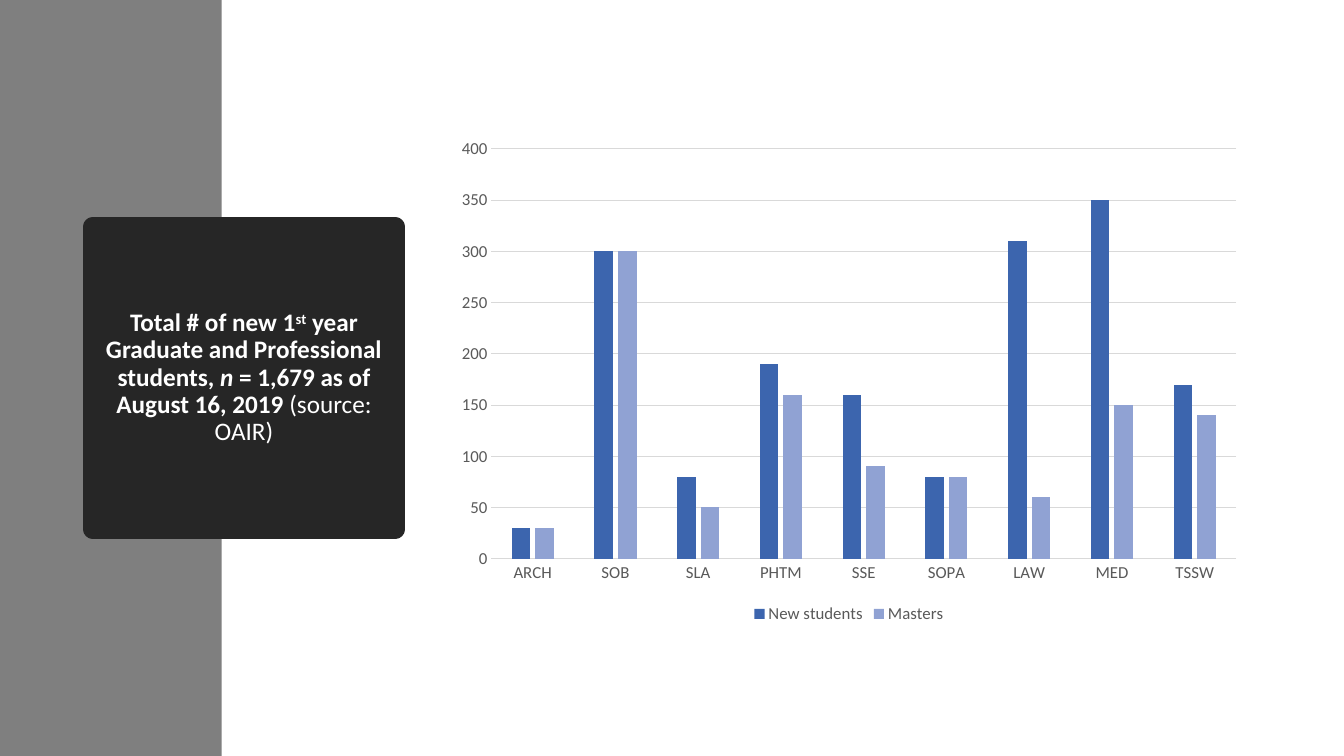
from lxml import etree
from pptx import Presentation
from pptx.chart import data as chart_data
from pptx.dml import color
from pptx.enum import chart as chart_enum, shapes, text
from pptx.oxml import ns
from pptx.util import Inches, Pt

FONT = "Calibri"
WHITE, GRAY, DARK = "FFFFFF", "7F7F7F", "262626"
AXIS_TEXT, GRID = "595959", "D9D9D9"

TITLE_RUNS = [
    ("Total # of new 1", {"bold": True}),
    ("st", {"bold": True, "baseline": 30000}),
    (" year Graduate and Professional students, ", {"bold": True}),
    ("n", {"bold": True, "italic": True}),
    (" = 1,679 as of August 16, 2019 ", {"bold": True}),
    ("(source: OAIR)", {"bold": False}),
]
SCHOOLS = ["ARCH", "SOB", "SLA", "PHTM", "SSE", "SOPA", "LAW", "MED", "TSSW"]
ENROLLMENT = [
    ("New students", "3C65AE", [30, 300, 80, 190, 160, 80, 310, 350, 170]),
    ("Masters", "90A2D3", [30, 300, 50, 160, 90, 80, 60, 150, 140]),
]


def rgb(value):
    return color.RGBColor.from_string(value)


def paint(fill, value):
    fill.solid()
    fill.fore_color.rgb = rgb(value)


def style_font(font, size, value, **formats):
    font.name, font.size = FONT, Pt(size)
    font.color.rgb = rgb(value)
    for key, setting in formats.items():
        setattr(font, key, setting)


def style_line(line, value, width):
    paint(line.fill, value)
    line.width = Pt(width)


def add_side_band(slide):
    band = slide.shapes.add_shape(
        shapes.MSO_SHAPE.RECTANGLE, 0, 0, Inches(2.2), Inches(7.5))
    paint(band.fill, GRAY)
    band.line.fill.background()
    band.shadow.inherit = False


def set_title(slide):
    title = slide.shapes.title
    title.left, title.top = Inches(0.92), Inches(2.25)
    title.width = title.height = Inches(3)

    # Round outline with soft line joins
    outline = etree.SubElement(
        title._element.spPr, ns.qn("a:prstGeom"), prst="ellipse")
    etree.SubElement(outline, ns.qn("a:avLst"))
    paint(title.fill, DARK)
    style_line(title.line, DARK, 13.75)
    etree.SubElement(title._element.spPr.find(ns.qn("a:ln")), ns.qn("a:round"))

    # Mixed bold, italic and superscript wording
    frame = title.text_frame
    frame.word_wrap = True
    frame.auto_size = text.MSO_AUTO_SIZE.NONE
    frame.vertical_anchor = text.MSO_ANCHOR.MIDDLE
    heading = frame.paragraphs[0]
    heading.alignment = text.PP_ALIGN.CENTER
    heading.line_spacing = 0.9
    for words, formats in TITLE_RUNS:
        formats = dict(formats)
        baseline = formats.pop("baseline", None)
        run = heading.add_run()
        run.text = words
        style_font(run.font, 18, WHITE, **formats)
        if baseline:
            run.font._element.set("baseline", str(baseline))

    # Bring the title in front of the band
    slide.shapes._spTree.append(title._element)


def style_axis(axis):
    axis.major_tick_mark = axis.minor_tick_mark = chart_enum.XL_TICK_MARK.NONE
    style_font(axis.tick_labels.font, 12, AXIS_TEXT)


def add_enrollment_chart(slide):
    enrollment = chart_data.CategoryChartData()
    enrollment.categories = SCHOOLS
    for name, _, counts in ENROLLMENT:
        enrollment.add_series(name, counts)
    chart = slide.shapes.add_chart(
        chart_enum.XL_CHART_TYPE.COLUMN_CLUSTERED, Inches(4.42), Inches(1.28),
        Inches(8), Inches(4.95), enrollment).chart
    chart.has_title = False
    style_font(chart.font, 10, "000000")

    # Columns
    plot = chart.plots[0]
    plot.gap_width, plot.overlap, plot.vary_by_categories = 219, -27, False
    for series, (_, shade, _) in zip(plot.series, ENROLLMENT):
        paint(series.format.fill, shade)

    # Axes and gridlines
    school_axis, count_axis = chart.category_axis, chart.value_axis
    for axis in (school_axis, count_axis):
        style_axis(axis)
    style_line(school_axis.format.line, GRID, 0.75)
    count_axis.minimum_scale, count_axis.maximum_scale = 0, 400
    count_axis.major_unit = 50
    count_axis.format.line.fill.background()
    style_line(count_axis.major_gridlines.format.line, GRID, 0.75)

    # Legend
    chart.has_legend = True
    chart.legend.position = chart_enum.XL_LEGEND_POSITION.BOTTOM
    chart.legend.include_in_layout = False
    style_font(chart.legend.font, 12, AXIS_TEXT)


def main():
    deck = Presentation()
    deck.slide_width, deck.slide_height = Inches(13.33), Inches(7.5)
    slide = deck.slides.add_slide(deck.slide_layouts[5])
    paint(slide.background.fill, WHITE)
    add_side_band(slide)
    set_title(slide)
    add_enrollment_chart(slide)
    deck.save("out.pptx")


if __name__ == "__main__":
    main()
